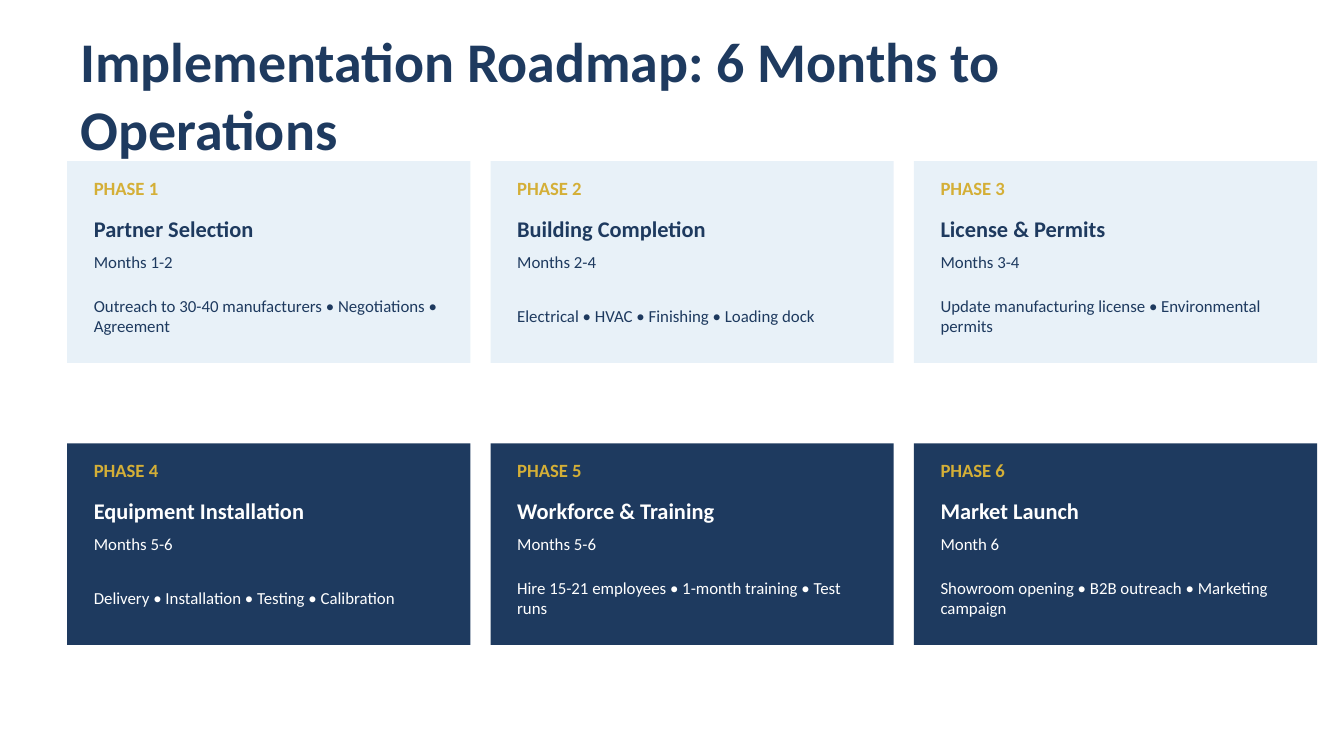
"""Build a six-phase implementation roadmap slide."""
from pptx import Presentation
from pptx.dml.color import RGBColor
from pptx.enum.shapes import MSO_SHAPE
from pptx.enum.text import MSO_ANCHOR
from pptx.util import Inches, Pt

RECT = MSO_SHAPE.RECTANGLE
MIDDLE = MSO_ANCHOR.MIDDLE

FONT = "Calibri"
NAVY, PALE, GOLD, WHITE = "1E3A5F", "E8F1F8", "D4AF37", "FFFFFF"

TITLE = "Implementation Roadmap: 6 Months to Operations"
PHASES = [
    ("Partner Selection", "Months 1-2",
     "Outreach to 30-40 manufacturers • Negotiations • Agreement"),
    ("Building Completion", "Months 2-4",
     "Electrical • HVAC • Finishing • Loading dock"),
    ("License & Permits", "Months 3-4",
     "Update manufacturing license • Environmental permits"),
    ("Equipment Installation", "Months 5-6",
     "Delivery • Installation • Testing • Calibration"),
    ("Workforce & Training", "Months 5-6",
     "Hire 15-21 employees • 1-month training • Test runs"),
    ("Market Launch", "Month 6",
     "Showroom opening • B2B outreach • Marketing campaign"),
]
ROW_COLORS = [(PALE, NAVY), (NAVY, WHITE)]

COLUMNS = 3
LEFT, TOP = 0.5, 1.2
CARD_W, CARD_H = 3, 1.5
STEP_X, STEP_Y = 3.15, 2.1
PAD = 0.1


def rgb(color):
    return RGBColor.from_string(color)


def add_text(slide, text, x, y, w, h, size, color, bold=False):
    tf = slide.shapes.add_textbox(Inches(x), Inches(y), Inches(w), Inches(h)).text_frame
    tf.word_wrap = True
    tf.vertical_anchor = MIDDLE
    r = tf.paragraphs[0].add_run()
    r.text = text
    r.font.name = FONT
    r.font.size = Pt(size)
    r.font.bold = bold
    r.font.color.rgb = rgb(color)


def add_card(slide, number, phase, x, y, fill, color):
    sp = slide.shapes.add_shape(RECT, Inches(x), Inches(y), Inches(CARD_W), Inches(CARD_H))
    sp.shadow.inherit = False
    sp.fill.solid()
    sp.fill.fore_color.rgb = rgb(fill)
    sp.line.fill.background()

    name, months, tasks = phase
    lines = [
        (f"PHASE {number}", 0.1, 0.2, 10, GOLD, True),
        (name, 0.35, 0.3, 12, color, True),
        (months, 0.65, 0.2, 9, color, False),
        (tasks, 0.9, 0.5, 9, color, False),
    ]
    for text, dy, h, size, text_color, bold in lines:
        add_text(slide, text, x + PAD, y + dy, CARD_W - 2 * PAD, h, size, text_color, bold)


def main():
    prs = Presentation()
    prs.slide_width = Inches(10)
    prs.slide_height = prs.slide_width * 9 // 16
    slide = prs.slides.add_slide(prs.slide_layouts[6])
    slide.background.fill.solid()
    slide.background.fill.fore_color.rgb = rgb(WHITE)

    add_text(slide, TITLE, 0.5, 0.4, 9, 0.6, 30, NAVY, True)
    for i, phase in enumerate(PHASES):
        row, col = divmod(i, COLUMNS)
        add_card(slide, i + 1, phase, LEFT + col * STEP_X, TOP + row * STEP_Y, *ROW_COLORS[row])
    prs.save("out.pptx")


if __name__ == "__main__":
    main()
